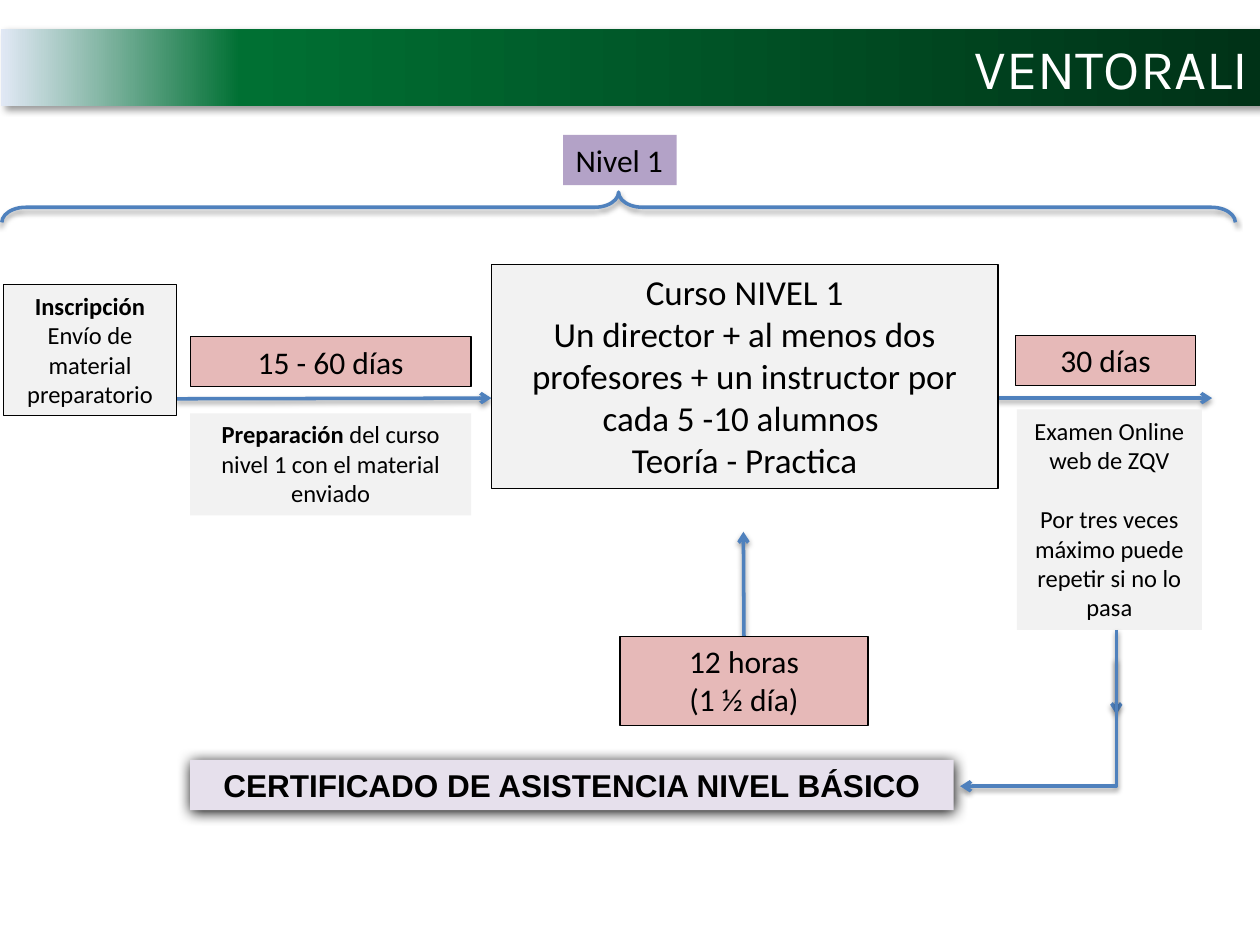
from copy import deepcopy

from lxml.etree import SubElement
from pptx import Presentation
from pptx.dml.color import RGBColor
from pptx.enum.shapes import MSO_CONNECTOR, MSO_SHAPE
from pptx.enum.text import MSO_ANCHOR, PP_ALIGN
from pptx.oxml.ns import qn
from pptx.util import Inches, Pt

WIDTH, HEIGHT = Inches(10), Inches(7.5)
COLORS = {"black": "000000", "white": "FFFFFF", "gray": "F2F2F2", "pink": "E6B9B8",
          "violet": "B3A2C7", "lilac": "E6E0EC", "blue": "4F81BD"}
BANNER_STOPS = [(0, "003217"), (0.81, "007033"), (1, "E1E8F5")]
SHADOWS = {"line": (38, 3.1, 1.6, 90), "certificate": (100, 8.5, 1, 90),
           "banner": (40, 4, 3, 45)}

BOXES = {
    "course": dict(at=(39, 28, 40.2, 23.73), fill="gray", outlined=True, size=20, text=[
        [("Curso NIVEL 1", False)],
        [("Un director + al menos dos profesores + un instructor por cada 5 -10 alumnos ", False)],
        [("Teoría - Practica", False)]]),
    "hours": dict(at=(49.2, 67.33, 19.7, 9.47), fill="pink", outlined=True, size=18, text=[
        [("12 horas", False)], [("(1 ½ día)", False)]]),
    "certificate": dict(at=(15.1, 80.4, 60.6, 5.33), fill="lilac", size=18, font="Arial", text=[
        [("CERTIFICADO DE ASISTENCIA NIVEL BÁSICO", True)]]),
    "level": dict(at=(44.7, 14.27, 9, 5.33), fill="violet", size=18, wrap=False,
                  align=PP_ALIGN.LEFT, text=[[("Nivel 1", False)]]),
    "preparation": dict(at=(15.1, 43.73, 22.3, 10.8), fill="gray", size=14, text=[
        [("Preparación ", True), ("del curso nivel 1 con el material enviado", False)]]),
    "banner": dict(at=(0.1, 3.07, 100, 8.13), size=32, font="Karla", ink="white",
                   align=PP_ALIGN.RIGHT, anchor=MSO_ANCHOR.MIDDLE, text=[[("VENTORALI", False)]]),
    "enrolment": dict(at=(0.3, 30.13, 13.7, 13.87), fill="gray", outlined=True, size=14, text=[
        [("Inscripción", True)], [("Envío de material preparatorio", False)]]),
    "preparation time": dict(at=(15.1, 35.6, 22.3, 5.33), fill="pink", outlined=True, size=18,
                             text=[[("15 - 60 días", False)]]),
    "exam time": dict(at=(80.6, 35.47, 14.3, 5.33), fill="pink", outlined=True, size=18,
                      text=[[("30 días", False)]]),
    "exam": dict(at=(80.7, 43.33, 14.7, 23.33), fill="gray", size=14, gap=17, text=[
        [("Examen Online web de ZQV", False)],
        [("Por tres veces máximo puede repetir si no lo pasa", False)]]),
}
ARROWS = {
    "hours": (59, 67.33, 59, 56.27),
    "exam": (88.6, 69.73, 88.6, 75.6),
    "preparation": (14, 42.2, 39, 42.13),
    "waiting": (79.1, 42.13, 96.2, 42.13),
}
CERTIFICATE_ELBOW = (76.2, 66.67, 88.6, 83.2)
BRACE = (47.9, -43.33, 2.4, 130.53)


def color(name):
    return RGBColor.from_string(COLORS[name])


def place(shares):
    return [round(share * side / 100) for share, side in zip(shares, (WIDTH, HEIGHT) * 2)]


def add_shadow(item, kind):
    alpha, blur, distance, angle = SHADOWS[kind]
    properties = item._element.spPr
    for old in properties.findall(qn("a:effectLst")):
        properties.remove(old)
    effects = SubElement(properties, qn("a:effectLst"))
    shadow = SubElement(effects, qn("a:outerShdw"), blurRad=str(Pt(blur)), dist=str(Pt(distance)),
                        dir=str(angle * 60000), rotWithShape="0")
    tone = SubElement(shadow, qn("a:srgbClr"), val=COLORS["black"])
    SubElement(tone, qn("a:alpha"), val=str(alpha * 1000))


def draw_stroke(item):
    item.line.color.rgb = color("blue")
    item.line.width = Pt(2)
    add_shadow(item, "line")


def fill_banner(box):
    box.fill.gradient()
    box.fill.gradient_angle = 180
    stops = box._element.spPr.find(".//" + qn("a:gsLst"))
    stops.append(deepcopy(stops[0]))
    for stop, (position, tone) in zip(box.fill.gradient_stops, BANNER_STOPS):
        stop.position = position
        stop.color.rgb = RGBColor.from_string(tone)


def add_box(page, at, text, size, fill=None, outlined=False, font="Calibri", ink="black",
            align=PP_ALIGN.CENTER, anchor=MSO_ANCHOR.TOP, wrap=True, gap=0):
    box = page.shapes.add_shape(MSO_SHAPE.RECTANGLE, *place(at))
    box.shadow.inherit = False
    if fill:
        box.fill.solid()
        box.fill.fore_color.rgb = color(fill)
    else:
        fill_banner(box)
    if outlined:
        box.line.color.rgb = color("black")
        box.line.width = Pt(0.75)
    else:
        box.line.fill.background()
    frame = box.text_frame
    frame.word_wrap = wrap
    frame.vertical_anchor = anchor
    for index, runs in enumerate(text):
        para = frame.add_paragraph() if index else frame.paragraphs[0]
        para.alignment = align
        para.space_before = Pt(gap if index else 0)
        for words, bold in runs:
            span = para.add_run()
            span.text = words
            span.font.name = font
            span.font.size = Pt(size)
            span.font.bold = bold
            span.font.color.rgb = color(ink)
    return box


def add_arrow(page, ends, kind=MSO_CONNECTOR.STRAIGHT):
    arrow = page.shapes.add_connector(kind, *place(ends))
    draw_stroke(arrow)
    SubElement(arrow.line._get_or_add_ln(), qn("a:tailEnd"), type="arrow")
    return arrow


def main():
    """Build the level 1 course flow slide."""
    deck = Presentation()
    deck.slide_width, deck.slide_height = WIDTH, HEIGHT
    page = deck.slides.add_slide(deck.slide_layouts[6])

    arrows = {name: add_arrow(page, ends) for name, ends in ARROWS.items()}
    boxes = {name: add_box(page, **box) for name, box in BOXES.items()}
    for name in ("certificate", "banner"):
        add_shadow(boxes[name], name)
    arrows["hours"].begin_connect(boxes["hours"], 0)

    brace = page.shapes.add_shape(MSO_SHAPE.RIGHT_BRACE, *place(BRACE))
    brace.rotation = 270
    brace.adjustments[0] = 0.79
    brace.fill.background()
    draw_stroke(brace)

    elbow = add_arrow(page, CERTIFICATE_ELBOW, MSO_CONNECTOR.ELBOW)
    elbow._element.spPr.find(qn("a:prstGeom")).set("prst", "bentConnector2")
    elbow._element.spPr.find(qn("a:xfrm")).set("rot", str(90 * 60000))

    deck.save("out.pptx")


if __name__ == "__main__":
    main()
